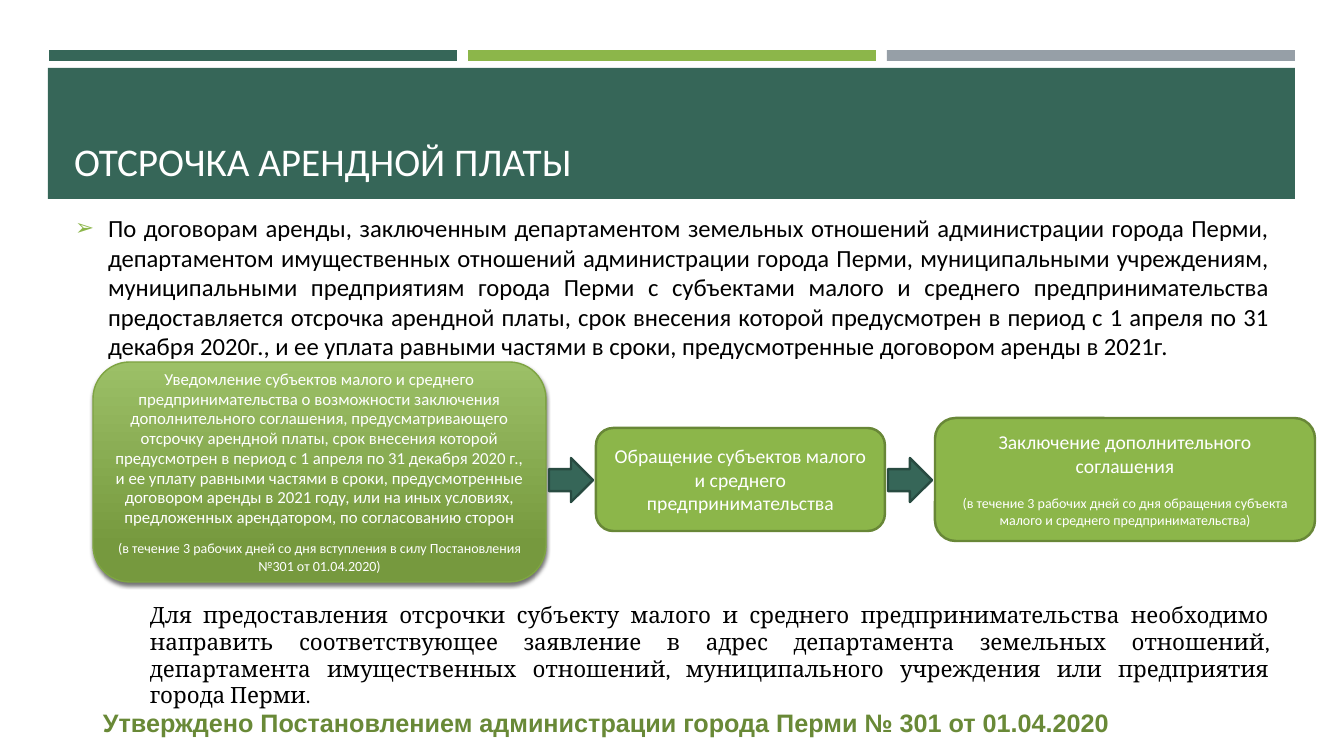
from dataclasses import dataclass

from lxml.etree import SubElement
from pptx import Presentation
from pptx.dml.color import RGBColor
from pptx.enum.shapes import MSO_SHAPE as SHAPE
from pptx.enum.text import MSO_ANCHOR as ANCHOR, MSO_AUTO_SIZE as FIT, PP_ALIGN as ALIGN
from pptx.oxml.ns import qn
from pptx.util import Pt

EMU_PER_PX = 12192000 / 1344


@dataclass(frozen=True)
class Theme:
    pine: str = "366658"
    pine_edge: str = "284B41"
    green: str = "8CB64A"
    green_edge: str = "688737"
    grey: str = "969FA7"
    grad_top: str = "9CC067"
    grad_bottom: str = "76993E"
    grad_edge: str = "7EA442"
    accent: str = "698937"
    white: str = "FFFFFF"
    black: str = "000000"
    title: float = 28
    body: float = 17.6
    decree: float = 18
    request: float = 16
    step: float = 14
    notice: float = 12
    term: float = 10


T = Theme()


def px(*values):
    return [round(v * EMU_PER_PX) for v in values]


def rgb(color):
    return RGBColor.from_string(color)


def write(p, text, size, color=T.white, font="Calibri", bold=False,
          align=ALIGN.LEFT, before=0, after=0, spacing=1.0):
    p.alignment = align
    p.space_before, p.space_after = Pt(before), Pt(after)
    p.line_spacing = spacing
    r = p.add_run()
    r.text = text
    r.font.size, r.font.name, r.font.bold = Pt(size), font, bold
    r.font.color.rgb = rgb(color)


def frame(sp, anchor, inset_x=10, inset_y=5):
    tf = sp.text_frame
    tf.word_wrap = True
    tf.auto_size = FIT.NONE
    tf.vertical_anchor = anchor
    tf.margin_left, tf.margin_right = px(inset_x, inset_x)
    tf.margin_top, tf.margin_bottom = px(inset_y, inset_y)
    return tf


def place(s, sp, box, anchor, **insets):
    sp.left, sp.top, sp.width, sp.height = px(*box)
    s.shapes._spTree.append(sp._element)
    return frame(sp, anchor, **insets)


def add_block(s, kind, box, fill, edge=None, width=1.75):
    sp = s.shapes.add_shape(kind, *px(*box))
    sp.shadow.inherit = False
    sp.fill.solid()
    sp.fill.fore_color.rgb = rgb(fill)
    if edge:
        sp.line.color.rgb = rgb(edge)
        sp.line.width = Pt(width)
    else:
        sp.line.fill.background()
    return sp


def add_step(s, box, paragraphs, edge=T.green_edge, width=1.75):
    sp = add_block(s, SHAPE.ROUNDED_RECTANGLE, box, T.green, edge, width)
    tf = frame(sp, ANCHOR.MIDDLE)
    for i, (text, fmt) in enumerate(paragraphs):
        p = tf.add_paragraph() if i else tf.paragraphs[0]
        write(p, text, align=ALIGN.CENTER, **fmt)
    return sp


def add_arrow(s, left, top):
    add_block(s, SHAPE.DOWN_ARROW, (left, top, 44, 44), T.pine, T.pine_edge).rotation = 270


def add_text(s, box, text, **fmt):
    tf = frame(s.shapes.add_textbox(*px(*box)), ANCHOR.TOP)
    write(tf.paragraphs[0], text, **fmt)


def add_bullet(p, char, color, percent, indent):
    pPr = p._p.get_or_add_pPr()
    pPr.set("marL", str(indent))
    pPr.set("indent", str(-indent))
    SubElement(SubElement(pPr, qn("a:buClr")), qn("a:srgbClr"), val=color)
    SubElement(pPr, qn("a:buSzPct"), val=str(percent * 1000))
    SubElement(pPr, qn("a:buFont"), typeface="Arial")
    SubElement(pPr, qn("a:buChar"), char=char)


def shade(sp):
    sp.fill.gradient()
    sp.fill.gradient_angle = 270
    stops = zip(sp.fill.gradient_stops, (0, 0.84), (T.grad_top, T.grad_bottom))
    for stop, position, color in stops:
        stop.position = position
        stop.color.rgb = rgb(color)


def cast_shadow(sp):
    effects = sp._element.spPr.find(qn("a:effectLst"))
    shadow = SubElement(effects, qn("a:outerShdw"), blurRad=str(Pt(3)), dist=str(Pt(2)),
                        dir="5400000", algn="ctr", rotWithShape="0")
    color = SubElement(shadow, qn("a:srgbClr"), val=T.black)
    SubElement(color, qn("a:alpha"), val="55000")


def add_header(s):
    for i, color in enumerate((T.pine, T.green, T.grey)):
        add_block(s, SHAPE.RECTANGLE, (49 + 419 * i, 50, 408, 11), color)
    add_block(s, SHAPE.RECTANGLE, (48, 68, 1247, 131), T.pine)
    tf = place(s, s.shapes.title, (64, 77, 1216, 112), ANCHOR.BOTTOM)
    write(tf.paragraphs[0], "ОТСРОЧКА АРЕНДНОЙ ПЛАТЫ", T.title)


def add_body(s):
    tf = place(s, s.placeholders[1], (65, 213, 1215, 148), ANCHOR.TOP, inset_y=0)
    p = tf.paragraphs[0]
    write(p, "По договорам аренды, заключенным департаментом земельных отношений "
          "администрации города Перми, департаментом имущественных отношений администрации "
          "города Перми, муниципальными учреждениям, муниципальными предприятиям города Перми "
          "с субъектами малого и среднего предпринимательства предоставляется отсрочка "
          "арендной платы, срок внесения которой предусмотрен в период с 1 апреля по "
          "31 декабря 2020г., и ее уплата равными частями в сроки, предусмотренные договором "
          "аренды в 2021г.", T.body, T.black, align=ALIGN.JUSTIFY)
    add_bullet(p, "➢", T.green, 92, px(33)[0])


def add_process(s):
    notice = add_step(s, (93, 362, 453, 220), [
        ("Уведомление субъектов малого и среднего предпринимательства о возможности "
         "заключения дополнительного соглашения, предусматривающего отсрочку арендной платы, "
         "срок внесения которой предусмотрен в период с 1 апреля по 31 декабря 2020 г., и ее "
         "уплату равными частями в сроки, предусмотренные договором аренды в 2021 году, или "
         "на иных условиях, предложенных арендатором, по согласованию сторон",
         dict(size=T.notice, spacing=0.98)),
        ("(в течение 3 рабочих дней со дня вступления в силу Постановления "
         "№301 от 01.04.2020)", dict(size=T.term, before=7, spacing=1.1)),
    ], T.grad_edge, 1)
    shade(notice)
    cast_shadow(notice)
    add_step(s, (596, 428, 289, 103), [
        ("Обращение субъектов малого и среднего предпринимательства", dict(size=T.step)),
    ])
    add_step(s, (935, 418, 380, 123), [
        ("Заключение дополнительного соглашения", dict(size=T.step)),
        ("(в течение 3 рабочих дней со дня обращения субъекта малого и среднего "
         "предпринимательства)", dict(size=T.term, before=12.5)),
    ])
    for left in (549, 888):
        add_arrow(s, left, 458)


def main():
    prs = Presentation()
    prs.slide_width, prs.slide_height = px(1344, 756)
    s = prs.slides.add_slide(prs.slide_layouts[1])
    add_header(s)
    add_body(s)
    add_text(s, (93, 702, 1228, 40),
             "Утверждено Постановлением администрации города Перми № 301 от 01.04.2020",
             size=T.decree, color=T.accent, font="Arial", bold=True)
    add_process(s)
    add_text(s, (140, 596, 1140, 92),
             "Для предоставления отсрочки субъекту малого и среднего предпринимательства "
             "необходимо направить соответствующее заявление в адрес департамента земельных "
             "отношений, департамента имущественных отношений, муниципального учреждения или "
             "предприятия города Перми.",
             size=T.request, color=T.black, font="Cambria", align=ALIGN.JUSTIFY)
    prs.save("out.pptx")


if __name__ == "__main__":
    main()
